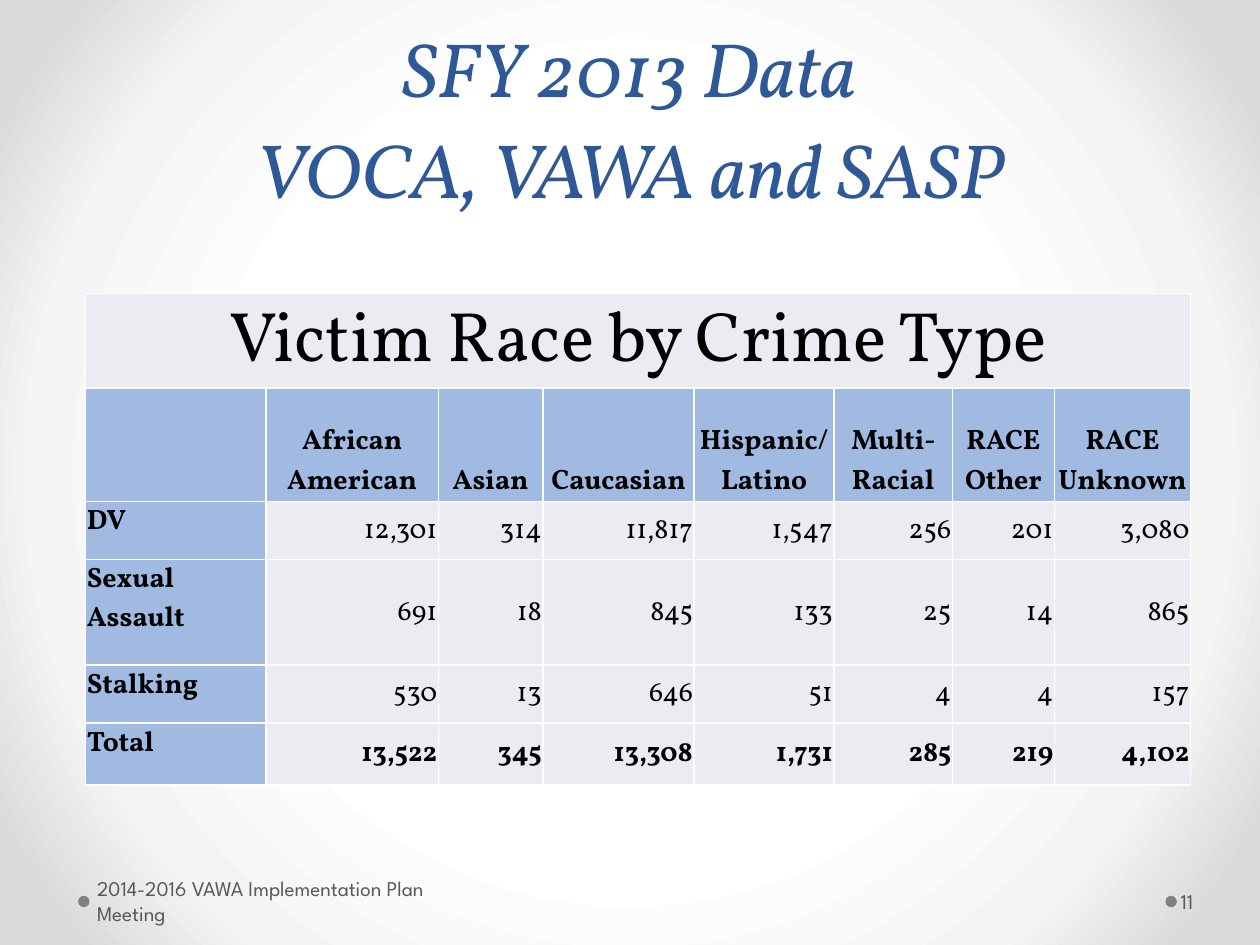
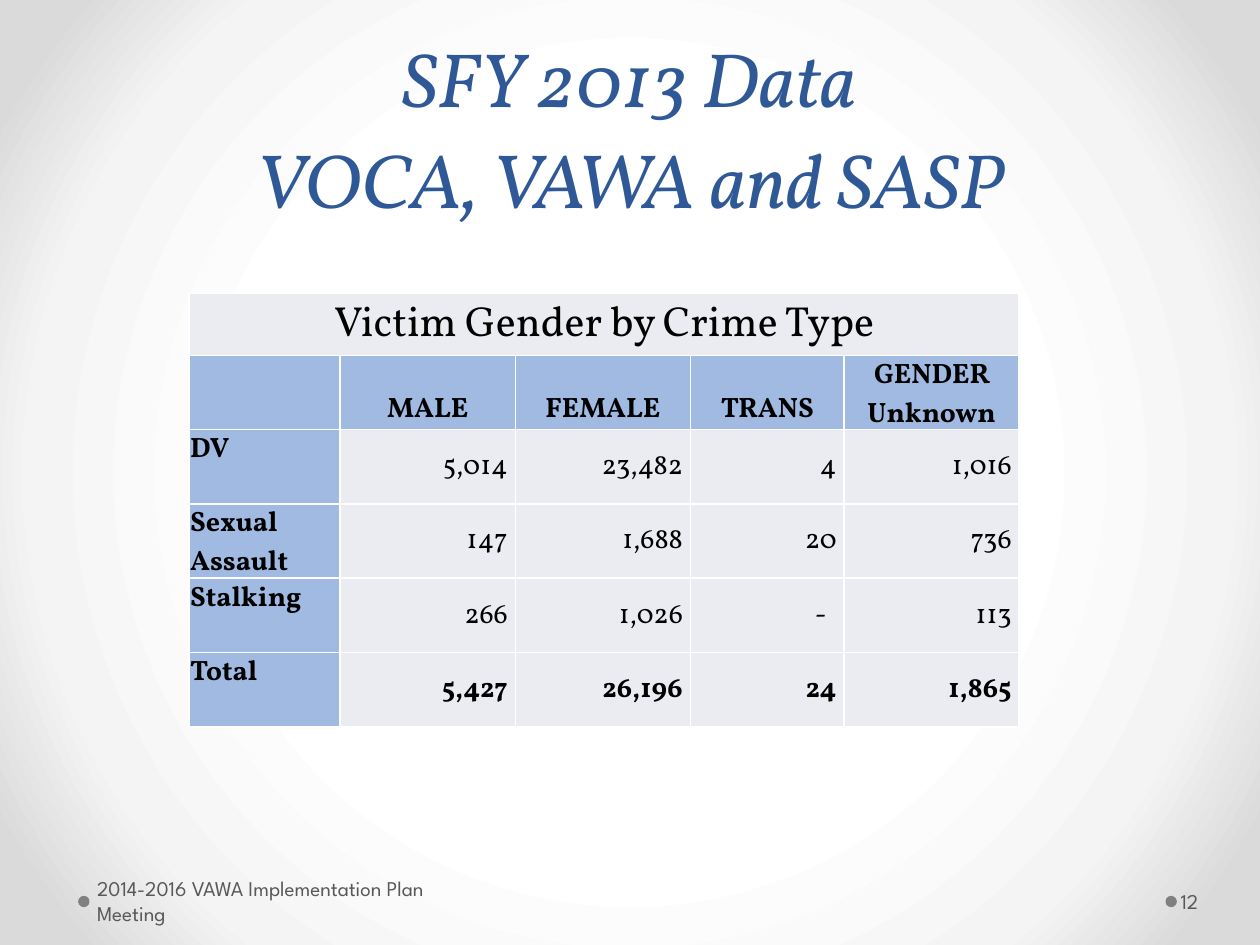
from dataclasses import dataclass

from lxml import etree
from pptx import Presentation
from pptx.dml.color import RGBColor
from pptx.enum.shapes import MSO_SHAPE
from pptx.enum.text import MSO_ANCHOR, PP_ALIGN
from pptx.oxml import parse_xml
from pptx.oxml.ns import nsdecls, qn
from pptx.util import Inches, Pt

LEFT, MID, RIGHT = PP_ALIGN.LEFT, PP_ALIGN.CENTER, PP_ALIGN.RIGHT
TOP, CENTRE, BASE = MSO_ANCHOR.TOP, MSO_ANCHOR.MIDDLE, MSO_ANCHOR.BOTTOM
OVAL = MSO_SHAPE.OVAL


@dataclass(frozen=True)
class Theme:
    serif: str = "Vollkorn"
    sans: str = "League Spartan"
    title: str = "2F5897"
    ink: str = "000000"
    foot: str = "595959"
    dot: str = "808080"
    head: str = "A0BAE1"
    body: str = "EAECF2"
    rule: str = "FFFFFF"
    glow: tuple = ((50, "FFFFFF"), (76, "F4F4F4"), (92, "DADADA"))
    title_size: int = 44
    lead: int = 58
    cell_size: int = 16
    foot_size: int = 12


def put(frame, text, font, size, color, bold=False, italic=False,
        align=LEFT, lead=None):
    """Fill the first paragraph of a text frame and format it."""
    para = frame.paragraphs[0]
    para.text = text
    para.alignment = align
    if lead:
        para.line_spacing = Pt(lead)
    for run in para.runs:
        run.font.name = font
        run.font.size = Pt(size)
        run.font.bold = bold
        run.font.italic = italic
        run.font.color.rgb = RGBColor.from_string(color)


def pad(item, left, top, right, base):
    item.margin_left, item.margin_top = Inches(left), Inches(top)
    item.margin_right, item.margin_bottom = Inches(right), Inches(base)


class Deck:
    def __init__(self, theme):
        self.theme = theme
        self.prs = Presentation()
        self.prs.slide_width, self.prs.slide_height = Inches(10), Inches(7.5)
        self.slide = None
        self.glow()

    def glow(self):
        """Give the master a round gradient that darkens at the corners."""
        fill = self.prs.slide_master.background.fill
        fill.solid()
        stops = "".join(
            f'<a:gs pos="{pos * 1000}"><a:srgbClr val="{color}"/></a:gs>'
            for pos, color in self.theme.glow)
        grad = parse_xml(
            f'<a:gradFill {nsdecls("a")} rotWithShape="1">'
            f'<a:gsLst>{stops}</a:gsLst><a:path path="circle">'
            '<a:fillToRect l="50000" t="50000" r="50000" b="50000"/>'
            '</a:path></a:gradFill>')
        root = self.prs.slide_master.element
        solid = next(root.iter(qn("p:bgPr"))).find(qn("a:solidFill"))
        solid.getparent().replace(solid, grad)

    def text(self, text, box, inset=(0.1, 0.05, 0.1, 0.05), anchor=CENTRE,
             **fmt):
        frame = self.slide.shapes.add_textbox(*map(Inches, box)).text_frame
        frame.word_wrap = True
        frame.vertical_anchor = anchor
        pad(frame, *inset)
        put(frame, text, **fmt)

    def dot(self, left):
        dot = self.slide.shapes.add_shape(
            OVAL, Inches(left), Inches(7.11), Inches(0.09), Inches(0.09))
        dot.shadow.inherit = False
        dot.fill.solid()
        dot.fill.fore_color.rgb = RGBColor.from_string(self.theme.dot)
        dot.line.fill.background()

    def page(self, number, height):
        """Start a slide with its title, of the given height, and footer."""
        look = self.theme
        self.slide = self.prs.slides.add_slide(self.prs.slide_layouts[6])
        self.text("SFY 2013 Data\nVOCA, VAWA and SASP", (0.5, 0.83, 9, height),
                  anchor=BASE, font=look.serif, size=look.title_size,
                  color=look.title, italic=True, align=MID, lead=look.lead)
        foot = dict(font=look.sans, size=look.foot_size, color=look.foot)
        self.dot(0.62)
        self.text("2014-2016 VAWA Implementation Plan Meeting",
                  (0.72, 6.95, 3.11, 0.4), (0.05, 0.05, 0.1, 0.05), **foot)
        self.dot(9.25)
        self.text(str(number), (9.34, 6.95, 0.61, 0.4),
                  (0.03, 0.05, 0.05, 0.05), **foot)

    def frame(self, cell):
        """Draw the four borders of a cell."""
        props = cell._tc.get_or_add_tcPr()
        for side in ("lnL", "lnR", "lnT", "lnB"):
            line = etree.SubElement(props, qn(f"a:{side}"), w=str(Pt(1)))
            fill = etree.SubElement(line, qn("a:solidFill"))
            etree.SubElement(fill, qn("a:srgbClr"), val=self.theme.rule)

    def cell(self, cell, text, fill, anchor, right=0.01, size=None, **fmt):
        look = self.theme
        self.frame(cell)
        cell.fill.solid()
        cell.fill.fore_color.rgb = RGBColor.from_string(fill)
        cell.vertical_anchor = anchor
        pad(cell, 0.01, 0.01, right, 0)
        put(cell.text_frame, text, font=look.serif,
            size=size or look.cell_size, color=look.ink, **fmt)

    def table(self, title, size, heads, rows, left, cols, tall, gap):
        """Draw a titled table; gap is the space right of each number."""
        look = self.theme
        grid = self.slide.shapes.add_table(
            len(tall), len(cols), Inches(left), Inches(2.33),
            Inches(sum(cols)), Inches(sum(tall))).table
        grid.first_row = grid.horz_banding = False
        for col, width in zip(grid.columns, cols):
            col.width = Inches(width)
        for row, height in zip(grid.rows, tall):
            row.height = Inches(height)

        grid.cell(0, 0).merge(grid.cell(0, len(cols) - 1))
        self.cell(grid.cell(0, 0), title, look.body, BASE, size=size,
                  align=MID)
        for c in range(1, len(cols)):
            self.frame(grid.cell(0, c))
        for c, head in enumerate(["", *heads]):
            self.cell(grid.cell(1, c), head, look.head, BASE, bold=True,
                      align=MID)
        for r, (name, *counts) in enumerate(rows, 2):
            self.cell(grid.cell(r, 0), name, look.head, TOP, bold=True)
            for c, count in enumerate(counts, 1):
                right = gap + 0.08 if count == "-" else gap
                self.cell(grid.cell(r, c), count, look.body, CENTRE, right,
                          bold=name == "Total", align=RIGHT)


def main():
    deck = Deck(Theme())

    deck.page(11, 0.92)
    deck.table(
        "Victim Race by Crime Type", 40,
        ["African American", "Asian", "Caucasian", "Hispanic/ Latino",
         "Multi-Racial", "RACE Other", "RACE Unknown"],
        [["DV", "12,301", "314", "11,817", "1,547", "256", "201", "3,080"],
         ["Sexual Assault", "691", "18", "845", "133", "25", "14", "865"],
         ["Stalking", "530", "13", "646", "51", "4", "4", "157"],
         ["Total", "13,522", "345", "13,308", "1,731", "285", "219",
          "4,102"]],
        left=0.68, cols=[1.43, 1.37, 0.83, 1.2, 1.11, 0.94, 0.81, 1.08],
        tall=[0.75, 0.9, 0.46, 0.84, 0.46, 0.49], gap=0.01)

    deck.page(12, 1)
    deck.table(
        "Victim Gender by Crime Type", 24,
        ["MALE", "FEMALE", "TRANS", "GENDER Unknown"],
        [["DV", "5,014", "23,482", "4", "1,016"],
         ["Sexual Assault", "147", "1,688", "20", "736"],
         ["Stalking", "266", "1,026", "-", "113"],
         ["Total", "5,427", "26,196", "24", "1,865"]],
        left=1.5, cols=[1.2, 1.39, 1.39, 1.22, 1.39],
        tall=[0.49] + [0.59] * 5, gap=0.06)

    deck.prs.save("out.pptx")


if __name__ == "__main__":
    main()
